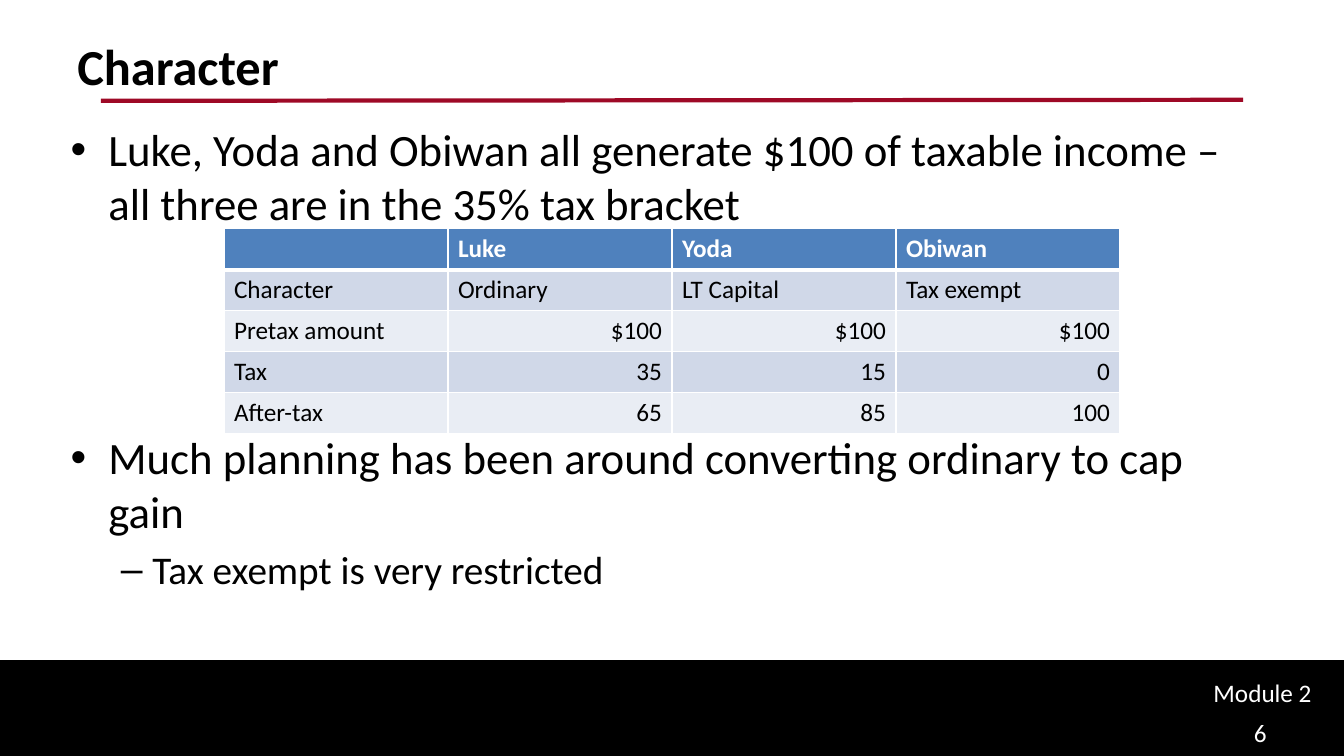
from lxml import etree
from pptx import Presentation
from pptx.dml.color import RGBColor
from pptx.enum.shapes import MSO_CONNECTOR, MSO_SHAPE
from pptx.enum.text import MSO_ANCHOR, MSO_AUTO_SIZE, PP_ALIGN
from pptx.oxml.ns import qn
from pptx.util import Pt

LEFT, RIGHT = PP_ALIGN.LEFT, PP_ALIGN.RIGHT
TOP = MSO_ANCHOR.TOP
FIXED = MSO_AUTO_SIZE.NONE
RECTANGLE = MSO_SHAPE.RECTANGLE
STRAIGHT = MSO_CONNECTOR.STRAIGHT

FONT = "Calibri"
PAGE_WIDTH, PAGE_HEIGHT = 960, 540
COLORS = {
    "black": "000000",
    "white": "FFFFFF",
    "rule": "9E0926",
    "header": "4F81BD",
    "dark band": "D0D8E8",
    "light band": "E9EDF4",
}

# Text, level, size, space before; the large space leaves room for the table.
BULLETS = [
    ("Luke, Yoda and Obiwan all generate $100 of taxable income – "
     "all three are in the 35% tax bracket", 0, 32, 0),
    ("Much planning has been around converting ordinary to cap gain", 0, 32, 143),
    ("Tax exempt is very restricted", 1, 28, 5.6),
]
TAX_ROWS = [
    ["", "Luke", "Yoda", "Obiwan"],
    ["Character", "Ordinary", "LT Capital", "Tax exempt"],
    ["Pretax amount", "$100", "$100", "$100"],
    ["Tax", "35", "15", "0"],
    ["After-tax", "65", "85", "100"],
]


def color(name):
    return RGBColor.from_string(COLORS[name])


def style_text(paragraph, size, color_name="black", bold=False, align=LEFT):
    paragraph.alignment = align
    for span in paragraph.runs:
        span.font.name = FONT
        span.font.size = Pt(size)
        span.font.bold = bold
        span.font.color.rgb = color(color_name)


def place(box, left, top, width, height):
    box.left, box.top = Pt(left), Pt(top)
    box.width, box.height = Pt(width), Pt(height)
    frame = box.text_frame
    frame.word_wrap = True
    frame.auto_size = FIXED
    frame.vertical_anchor = TOP


def add_footer_band(page):
    height = 67.5
    band = page.shapes.add_shape(
        RECTANGLE, 0, Pt(PAGE_HEIGHT - height), Pt(PAGE_WIDTH), Pt(height))
    band.shadow.inherit = False
    band.fill.solid()
    band.fill.fore_color.rgb = color("black")
    band.line.color.rgb = color("black")
    band.line.width = Pt(2)


def add_title_rule(page):
    rule = page.shapes.add_connector(STRAIGHT, Pt(72), Pt(72), Pt(888), Pt(71.3))
    rule.line.color.rgb = color("rule")
    rule.line.width = Pt(3)
    etree.SubElement(rule.element.spPr, qn("a:effectLst"))


def fill_title(page, text):
    title = page.shapes.title
    place(title, 48, 21.6, 864, 90)
    title.text_frame.text = text
    style_text(title.text_frame.paragraphs[0], 36, bold=True)


def fill_bullets(page, bullets):
    body = page.placeholders[1]
    place(body, 43.2, 83.5, 864, 334.8)
    frame = body.text_frame
    frame.text = "\n".join(bullet[0] for bullet in bullets)
    for paragraph, (_, level, size, space) in zip(frame.paragraphs, bullets):
        paragraph.level = level
        paragraph.space_before = Pt(space)
        style_text(paragraph, size)


def add_label(page, text, left, top, width, height):
    box = page.shapes.add_textbox(0, 0, 0, 0)
    place(box, left, top, width, height)
    box.text_frame.text = text
    style_text(box.text_frame.paragraphs[0], 18, "white")


def add_border(cell, side, width):
    """Draw one white cell edge; call before the cell is filled."""
    properties = cell._tc.get_or_add_tcPr()
    edge = etree.SubElement(properties, qn("a:ln" + side), w=str(Pt(width)))
    fill = etree.SubElement(edge, qn("a:solidFill"))
    etree.SubElement(fill, qn("a:srgbClr"), val=COLORS["white"])


def add_tax_table(page, rows):
    row_height, column_width = 29.2, 160
    frame = page.shapes.add_table(
        len(rows), len(rows[0]), Pt(160), Pt(163.5),
        Pt(column_width * len(rows[0])), Pt(row_height * len(rows)))
    table = frame.table
    for row_index, row in enumerate(rows):
        header = row_index == 0
        band = "header" if header else ("light band", "dark band")[row_index % 2]
        for column_index, text in enumerate(row):
            cell = table.cell(row_index, column_index)
            for side in "LRTB":
                under_header = (row_index, side) in ((0, "B"), (1, "T"))
                add_border(cell, side, 3 if under_header else 1)
            cell.fill.solid()
            cell.fill.fore_color.rgb = color(band)
            cell.text_frame.text = text
            number = row_index > 1 and column_index > 0
            style_text(cell.text_frame.paragraphs[0], 18,
                       "white" if header else "black", header,
                       RIGHT if number else LEFT)


def main():
    deck = Presentation()
    deck.slide_width, deck.slide_height = Pt(PAGE_WIDTH), Pt(PAGE_HEIGHT)
    page = deck.slides.add_slide(deck.slide_layouts[1])
    add_footer_band(page)
    add_title_rule(page)
    fill_title(page, "Character")
    fill_bullets(page, BULLETS)
    add_label(page, "Module 2", 859.7, 480.2, 95, 28.8)
    add_label(page, "6", 888.5, 509, 65.5, 31)
    add_tax_table(page, TAX_ROWS)
    deck.save("out.pptx")


if __name__ == "__main__":
    main()
